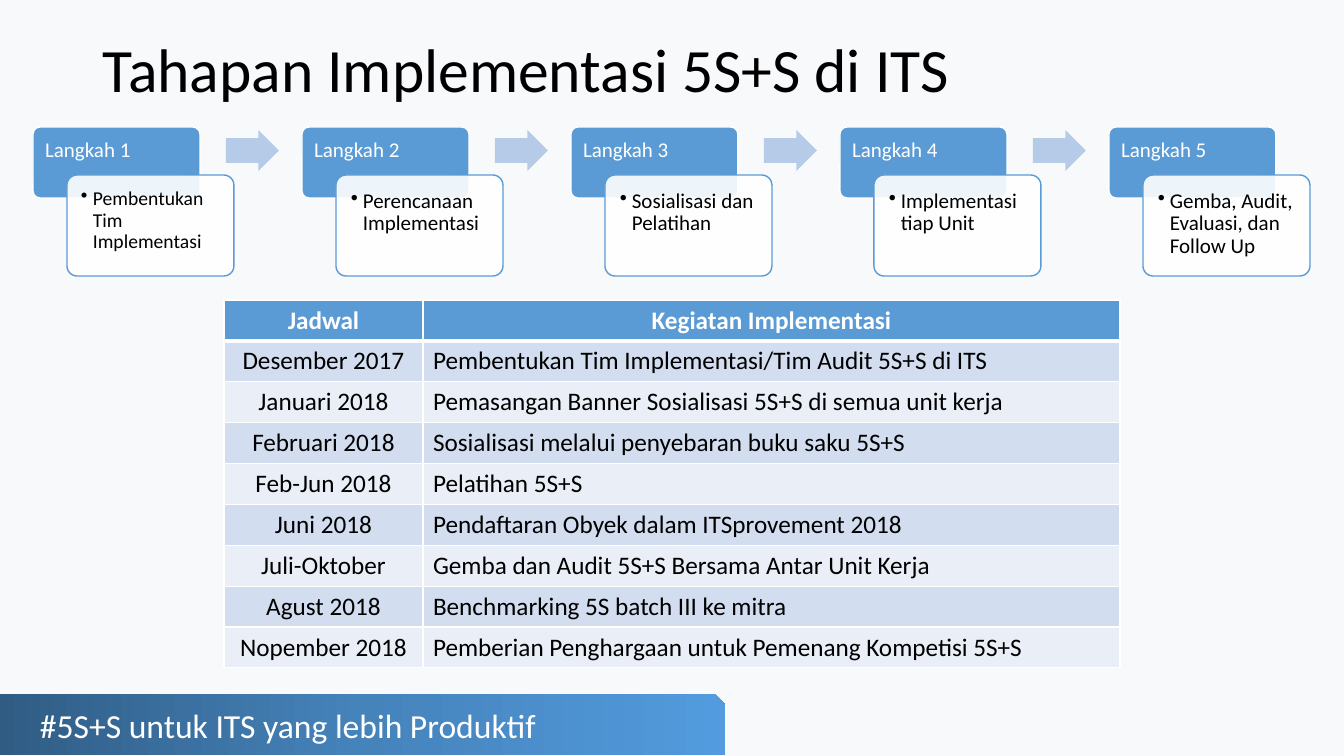
"""Build the slide on the stages of the 5S+S programme at ITS."""
from copy import deepcopy

from pptx import Presentation
from pptx.dml.color import RGBColor
from pptx.enum.shapes import MSO_SHAPE
from pptx.enum.text import MSO_ANCHOR, PP_ALIGN
from pptx.oxml import parse_xml
from pptx.oxml.ns import nsdecls, qn
from pptx.util import Pt

ROUNDED = MSO_SHAPE.ROUNDED_RECTANGLE
ARROW = MSO_SHAPE.RIGHT_ARROW
SNIPPED = MSO_SHAPE.SNIP_1_RECTANGLE
TOP, MIDDLE = MSO_ANCHOR.TOP, MSO_ANCHOR.MIDDLE
LEFT, CENTER = PP_ALIGN.LEFT, PP_ALIGN.CENTER
PX = 12192000 / 1344
BLUE, WHITE, BLACK = "5B9BD5", "FFFFFF", "000000"


def color(code):
    return RGBColor.from_string(code)


def write(frame, text, size, code, bold=False, align=LEFT, spacing=1.0):
    paragraph = frame.paragraphs[0]
    paragraph.alignment = align
    paragraph.line_spacing = spacing
    run = paragraph.add_run()
    run.text = text
    run.font.name = "Calibri"
    run.font.size = Pt(size)
    run.font.bold = bold
    run.font.color.rgb = color(code)
    return paragraph


prs = Presentation()
prs.slide_width, prs.slide_height = round(1344 * PX), round(756 * PX)
slide = prs.slides.add_slide(prs.slide_layouts[6])
slide.background.fill.solid()
slide.background.fill.fore_color.rgb = color("F8F9FB")
shapes = slide.shapes

banner = shapes.add_shape(SNIPPED, *[round(v * PX) for v in (0, 694, 725, 61)])
banner.shadow.inherit = False
banner.line.fill.background()
banner.fill.gradient()
banner.fill.gradient_angle = 0
stops = banner._element.spPr.find(".//" + qn("a:gsLst"))
stops.insert(1, deepcopy(stops[0]))
shades = [(0, "305C84"), (0.5, "4583BB"), (1, "529BDE")]
for stop, (position, shade) in zip(banner.fill.gradient_stops, shades):
    stop.position = position
    stop.color.rgb = color(shade)

slogan = shapes.add_textbox(*[round(v * PX) for v in (30, 700, 521, 50)])
slogan.text_frame.word_wrap = False
write(slogan.text_frame, "#5S+S untuk ITS yang lebih Produktif", 24, WHITE)

title = shapes.add_textbox(*[round(v * PX) for v in (93, 19, 1159, 108)])
title.text_frame.word_wrap = True
title.text_frame.vertical_anchor = MIDDLE
write(title.text_frame, "Tahapan Implementasi 5S+S di ITS", 44, BLACK, spacing=0.9)

steps = [
    ("Pembentukan Tim Implementasi", 14, 11),
    ("Perencanaan Implementasi", 15, 12),
    ("Sosialisasi dan Pelatihan", 15, 12),
    ("Implementasi tiap Unit", 15, 12),
    ("Gemba, Audit, Evaluasi, dan Follow Up", 15, 12),
]
for number, (activity, size, inset) in enumerate(steps):
    x = 33 + 269 * number
    parts = [
        (x, 127, 167, 71, BLUE, WHITE, f"Langkah {number + 1}", 15, WHITE, 10),
        (x + 34, 175, 167, 101, WHITE, BLUE, activity, size, BLACK, inset),
    ]
    for left, top, width, height, fill, edge, text, points, ink, margin in parts:
        card = shapes.add_shape(ROUNDED, *[round(v * PX) for v in (left, top, width, height)])
        card.adjustments[0] = 0.1
        card.shadow.inherit = False
        card.fill.solid()
        card.fill.fore_color.rgb = color(fill)
        card.line.color.rgb = color(edge)
        card.line.width = Pt(1)
        frame = card.text_frame
        frame.word_wrap = True
        frame.vertical_anchor = TOP
        frame.margin_left = frame.margin_right = frame.margin_top = round(margin * PX)
        frame.margin_bottom = round(6 * PX)
        line = write(frame, text, points, ink, spacing=0.9)
    card.fill._xPr.find(".//" + qn("a:srgbClr")).append(
        parse_xml(f'<a:alpha {nsdecls("a")} val="90000"/>'))
    bullet = line._p.get_or_add_pPr()
    bullet.set("marL", str(round(12 * PX)))
    bullet.set("indent", str(round(-12 * PX)))
    bullet.append(parse_xml(f'<a:buChar {nsdecls("a")} char="•"/>'))

    if number < len(steps) - 1:
        arrow = shapes.add_shape(ARROW, *[round(v * PX) for v in (x + 193, 130, 53, 41)])
        arrow.adjustments[0] = 0.6
        arrow.adjustments[1] = 0.5
        arrow.shadow.inherit = False
        arrow.fill.solid()
        arrow.fill.fore_color.rgb = color("B5CBE7")
        arrow.line.fill.background()

schedule = [
    ("Jadwal", "Kegiatan Implementasi"),
    ("Desember 2017", "Pembentukan Tim Implementasi/Tim Audit 5S+S di ITS"),
    ("Januari 2018", "Pemasangan Banner Sosialisasi 5S+S di semua unit kerja"),
    ("Februari 2018", "Sosialisasi melalui penyebaran buku saku 5S+S"),
    ("Feb-Jun 2018", "Pelatihan 5S+S"),
    ("Juni 2018", "Pendaftaran Obyek dalam ITSprovement 2018"),
    ("Juli-Oktober", "Gemba dan Audit 5S+S Bersama Antar Unit Kerja"),
    ("Agust 2018", "Benchmarking 5S batch III ke mitra"),
    ("Nopember 2018", "Pemberian Penghargaan untuk Pemenang Kompetisi 5S+S"),
]
table = shapes.add_table(
    len(schedule), 2, *[round(v * PX) for v in (224, 300, 896, 368)]).table
table.columns[0].width = round(199 * PX)
table.columns[1].width = round(697 * PX)
for r, entry in enumerate(schedule):
    heading = r == 0
    for c, text in enumerate(entry):
        cell = table.cell(r, c)
        cell.fill.solid()
        cell.fill.fore_color.rgb = color(BLUE if heading else ("EAEFF7", "D2DEEF")[r % 2])
        write(cell.text_frame, text, 18, WHITE if heading else BLACK, heading,
              CENTER if heading or c == 0 else LEFT)
        borders = cell._tc.get_or_add_tcPr()
        for order, side in enumerate("LRTB"):
            thick = (r, side) in ((0, "B"), (1, "T"))
            borders.insert(order, parse_xml(
                f'<a:ln{side} {nsdecls("a")} w="{Pt(3 if thick else 1)}"><a:solidFill>'
                f'<a:srgbClr val="{WHITE}"/></a:solidFill></a:ln{side}>'))

prs.save("out.pptx")
